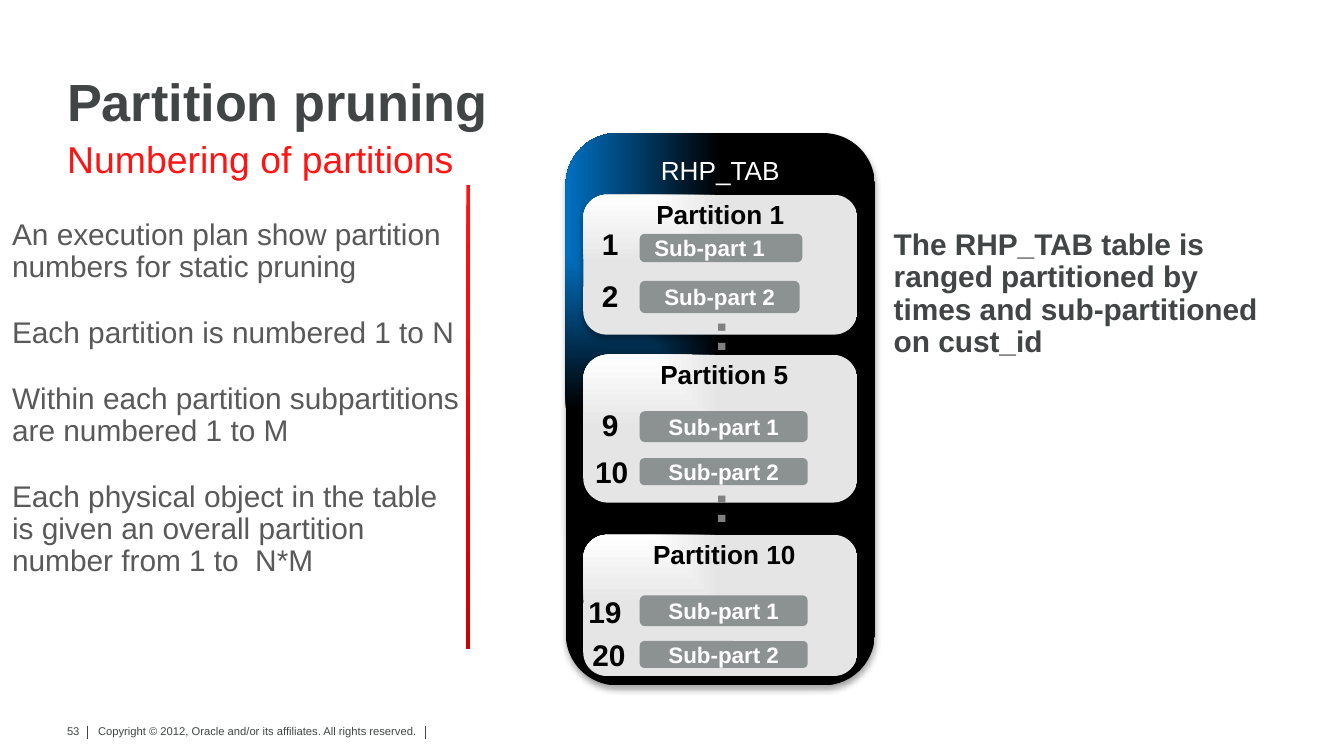
from lxml import etree
from pptx import Presentation
from pptx import util as u
from pptx.dml import color
from pptx.enum import shapes, text
from pptx.oxml import ns

COLS, ROWS = 100, 56.25
CELL = u.Inches(0.1)
INK, BODY, RED = "424545", "595959", "FF1414"
LEFT, CENTER, RIGHT = text.PP_ALIGN.LEFT, text.PP_ALIGN.CENTER, text.PP_ALIGN.RIGHT
TOP, MIDDLE, BOTTOM = text.MSO_ANCHOR.TOP, text.MSO_ANCHOR.MIDDLE, text.MSO_ANCHOR.BOTTOM


def rgb(value):
    return color.RGBColor.from_string(value)


def grid(*cells):
    return [u.Emu(round(c * CELL)) for c in cells]


def child(parent, tag, **attrs):
    return etree.SubElement(parent, ns.qn(tag), {k: str(v) for k, v in attrs.items()})


def write(tf, paragraphs, size=16, ink=INK, bold=False, align=LEFT, anchor=TOP,
          spacing=1.0, after=0, inset=(1, 0.5), wrap=True):
    tf.word_wrap = wrap
    tf.vertical_anchor = anchor
    tf.margin_left = tf.margin_right = grid(inset[0])[0]
    tf.margin_top = tf.margin_bottom = grid(inset[1])[0]
    for i, line in enumerate(paragraphs):
        p = tf.paragraphs[0] if i == 0 else tf.add_paragraph()
        p.alignment, p.line_spacing, p.space_after = align, spacing, u.Pt(after)
        r = p.add_run()
        r.text = line
        r.font.name, r.font.size, r.font.bold = "Arial", u.Pt(size), bold
        r.font.color.rgb = rgb(ink)


class Deck:
    def __init__(self):
        self.prs = Presentation()
        self.prs.slide_width, self.prs.slide_height = grid(COLS, ROWS)
        self.s = self.prs.slides.add_slide(self.prs.slide_layouts[6])

    def text(self, box, *paragraphs, **style):
        sp = self.s.shapes.add_textbox(*grid(*box))
        write(sp.text_frame, paragraphs, **style)

    def block(self, box, fill, rounded=True):
        kind = shapes.MSO_SHAPE.ROUNDED_RECTANGLE if rounded else shapes.MSO_SHAPE.RECTANGLE
        sp = self.s.shapes.add_shape(kind, *grid(*box))
        sp.shadow.inherit = False
        sp.line.fill.background()
        if isinstance(fill, str):
            sp.fill.solid()
            sp.fill.fore_color.rgb = rgb(fill)
        else:
            sp.fill.gradient()
            sp.fill.gradient_angle = 270
            for stop, value in zip(sp.fill.gradient_stops, fill):
                stop.color.rgb = rgb(value)
        return sp

    def panel(self, box, fill):
        sp = self.block(box, fill)
        spPr = sp._element.spPr
        grad = spPr.find(ns.qn("a:gradFill"))
        grad.remove(grad.find(ns.qn("a:lin")))
        path = child(grad, "a:path", path="rect")
        child(path, "a:fillToRect", r=100000, b=100000)
        shadow = child(spPr.find(ns.qn("a:effectLst")), "a:outerShdw",
                       blurRad=u.Pt(3.5), dist=u.Pt(2.2), dir=5400000, rotWithShape=0)
        child(child(shadow, "a:srgbClr", val="000000"), "a:alpha", val=32000)
        return sp

    def line(self, x, top, bottom):
        sp = self.s.shapes.add_connector(shapes.MSO_CONNECTOR.STRAIGHT, *grid(x, top, x, bottom))
        sp.line.color.rgb, sp.line.width = rgb(INK), u.Pt(0.5)
        child(sp._element.spPr, "a:effectLst")

    def partition(self, name, middle, top, height, subparts):
        self.panel((43.4, top, 20.4, height), ("FFFFFF", "E5E5E5"))
        self.text((middle - 6.7, top, 13.4, 3.2), name, size=14, ink="000000", bold=True,
                  align=CENTER, spacing=0.9)
        for i, (number, center, number_top, y, w, h, align) in enumerate(subparts, 1):
            sp = self.block((47.6, y, w, h), "8C9191")
            write(sp.text_frame, [f"Sub-part {i}"], size=12, ink="FFFFFF", bold=True,
                  align=align, anchor=MIDDLE)
            self.text((center - 2.6, number_top, 5.2, 3.5), number, ink="000000",
                      bold=True, align=CENTER, spacing=0.9)


PARTITIONS = [
    ("Partition 1", 53.6, 14.5, 10.4, [("1", 45.4, 16.6, 17.4, 12.1, 2.1, LEFT),
                                       ("2", 45.4, 20.5, 20.9, 11.9, 2.4, CENTER)]),
    ("Partition 5", 53.9, 26.4, 11, [("9", 45.4, 30.1, 30.6, 12.5, 2.3, CENTER),
                                     ("10", 45.5, 33.6, 34.1, 12.5, 2, CENTER)]),
    ("Partition 10", 53.9, 39.8, 10.5, [("19", 45, 44, 44.3, 12.5, 2.3, CENTER),
                                        ("20", 45.3, 47.2, 47.7, 12.5, 2, CENTER)]),
]


def main():
    deck = Deck()
    deck.text((6.9, 53.7, 27.4, 2.4),
              "Copyright © 2012, Oracle and/or its affiliates. All rights reserved.",
              size=6, inset=(0.4, 0.2))
    for x in (6.5, 31.65):
        deck.line(x, 54, 55)
    deck.text((3.9, 53.4, 3, 2), "53", size=6, align=RIGHT, wrap=False)
    deck.block((34.7, 13.8, 0.3, 34.5), (RED, "CE0000"), rounded=False)

    deck.text((5, 5.3, 90, 4.6), "Partition pruning", size=28, bold=True,
              anchor=BOTTOM, spacing=0.9, inset=(0, 0))
    deck.text((5, 10.1, 34.2, 3.3), "Numbering of partitions", size=20, ink=RED, inset=(0, 0))
    deck.text((0.9, 16.35, 33.8, 27.2),
              "An execution plan show partition numbers for static pruning",
              "Each partition is numbered 1 to N",
              "Within each partition subpartitions are numbered 1 to M",
              "Each physical object in the table is given an overall partition number from 1 to  N*M",
              ink=BODY, spacing=0.9, after=18, inset=(0, 0))

    table = deck.panel((42.1, 9.9, 23, 41.1), ("0070C0", "000000"))
    write(table.text_frame, ["RHP_TAB"], size=14, ink="FFFFFF", align=CENTER)
    for partition in PARTITIONS:
        deck.partition(*partition)
    for top in (22.2, 35):
        deck.text((51.9, top, 3.6, 5.3), ":", size=28, ink="808080", bold=True,
                  align=CENTER, spacing=0.9)
    deck.text((66.5, 17.1, 28.4, 14.9),
              "The RHP_TAB table is ranged partitioned by times and sub-partitioned on cust_id",
              bold=True, spacing=0.9, inset=(0, 0))
    deck.prs.save("out.pptx")


if __name__ == "__main__":
    main()
